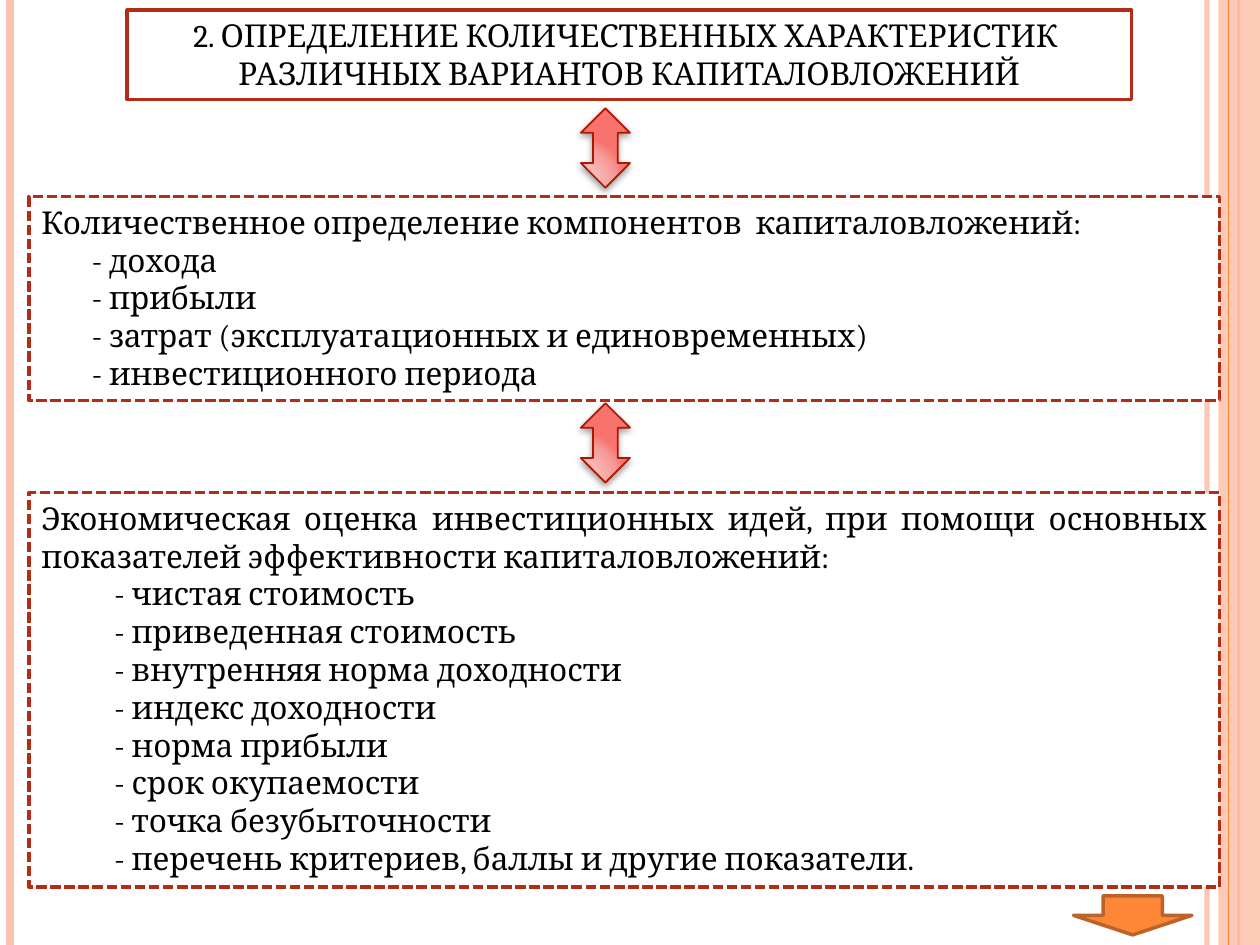
from dataclasses import dataclass

from lxml.etree import SubElement
from pptx import Presentation
from pptx.dml.color import RGBColor
from pptx.enum.dml import MSO_LINE
from pptx.enum.shapes import MSO_CONNECTOR, MSO_SHAPE
from pptx.enum.text import MSO_ANCHOR, PP_ALIGN
from pptx.oxml import parse_xml
from pptx.oxml.ns import nsdecls, qn
from pptx.util import Inches, Pt


@dataclass(frozen=True)
class Theme:
    font: str = "Cambria"
    text_size: int = 18
    text: str = "000000"
    paper: str = "FFFFFF"
    frame: str = "B32C16"
    peach: str = "FEC3AE"
    orange: str = "FE8637"
    orange_edge: str = "BC6329"
    arrow_edge: str = "AC1800"
    arrow_stops: tuple = ((0, "F8C5C3"), (30, "F8BFBD"), (75, "F69B98"), (100, "F8736E"))


theme = Theme()
deck = Presentation()
deck.slide_width, deck.slide_height = Inches(10), Inches(7.5)
page = deck.slides.add_slide(deck.slide_layouts[6])


def set_alpha(fill_parent, percent):
    color = fill_parent.find(".//" + qn("a:srgbClr"))
    SubElement(color, qn("a:alpha")).set("val", str(percent * 1000))


def add_shape(kind, left, top, width, height, fill=None, edge=None, weight=2):
    shape = page.shapes.add_shape(
        kind, Inches(left), Inches(top), Inches(width), Inches(height))
    shape.shadow.inherit = False
    if fill:
        shape.fill.solid()
        shape.fill.fore_color.rgb = RGBColor.from_string(fill)
    else:
        shape.fill.background()
    if edge:
        shape.line.color.rgb = RGBColor.from_string(edge)
        shape.line.width = Pt(weight)
    else:
        shape.line.fill.background()
    return shape


# Vertical stripes at the page edges, with the band between them
for x, color, weight, alpha in (
    (9.58, theme.peach, 3, 93),
    (0.08, theme.peach, 4.5, 100),
    (9.83, theme.orange, 1.5, 100),
    (9.75, theme.orange, 0.75, 100),
):
    if x == 9.83:
        stripe_first = False
    stripe = page.shapes.add_connector(
        MSO_CONNECTOR.STRAIGHT, Inches(x), 0, Inches(x), deck.slide_height)
    stripe.line.color.rgb = RGBColor.from_string(color)
    stripe.line.width = Pt(weight)
    properties = stripe.element.spPr
    SubElement(properties, qn("a:effectLst"))
    if alpha < 100:
        set_alpha(properties, alpha)
    if x == 9.83:
        band = add_shape(MSO_SHAPE.RECTANGLE, 9.67, 0, 0.33, 7.5, theme.peach)
        set_alpha(band.element.spPr, 87)

# Text boxes: position, dashed edge, lead lines, alignment, list indents, list
boxes = (
    ((1.01, 0.08, 7.97, 0.71), False,
     ("2. ОПРЕДЕЛЕНИЕ КОЛИЧЕСТВЕННЫХ ХАРАКТЕРИСТИК ",
      "РАЗЛИЧНЫХ ВАРИАНТОВ КАПИТАЛОВЛОЖЕНИЙ"),
     PP_ALIGN.CENTER, (0, 0), ()),
    ((0.23, 1.56, 9.45, 1.62), True,
     ("Количественное определение компонентов  капиталовложений:",),
     PP_ALIGN.LEFT, (0.4, 0),
     ("дохода", "прибыли", "затрат (эксплуатационных и единовременных)",
      "инвестиционного периода")),
    ((0.23, 3.91, 9.45, 3.13), True,
     ("Экономическая оценка инвестиционных идей, при помощи основных "
      "показателей эффективности капиталовложений:",),
     PP_ALIGN.JUSTIFY, (0, 0.58),
     ("чистая стоимость", "приведенная стоимость", "внутренняя норма доходности",
      "индекс доходности", "норма прибыли", "срок окупаемости",
      "точка безубыточности", "перечень критериев, баллы и другие показатели.")),
)
for place, dashed, leads, lead_align, (margin, indent), items in boxes:
    box = add_shape(MSO_SHAPE.RECTANGLE, *place, theme.paper, theme.frame)
    if dashed:
        box.line.dash_style = MSO_LINE.SQUARE_DOT
    frame = box.text_frame
    frame.word_wrap = dashed
    frame.vertical_anchor = MSO_ANCHOR.TOP
    lines = [(lead, lead_align, 0, 0) for lead in leads]
    lines += [("- " + item, PP_ALIGN.LEFT, margin, indent) for item in items]
    for number, (text, align, line_margin, line_indent) in enumerate(lines):
        para = frame.add_paragraph() if number else frame.paragraphs[0]
        para.alignment = align
        settings = para._p.get_or_add_pPr()
        settings.set("marL", str(Inches(line_margin)))
        settings.set("indent", str(Inches(line_indent)))
        span = para.add_run()
        span.text = text
        span.font.name = theme.font
        span.font.size = Pt(theme.text_size)
        span.font.color.rgb = RGBColor.from_string(theme.text)

# Double arrows between the boxes, with a radial gradient and a soft shadow
stops = "".join(
    f'<a:gs pos="{position * 1000}"><a:srgbClr val="{color}"/></a:gs>'
    for position, color in theme.arrow_stops)
for top in (0.86, 3.2):
    arrow = add_shape(MSO_SHAPE.UP_DOWN_ARROW, 4.61, top, 0.39, 0.63,
                      edge=theme.arrow_edge, weight=1)
    properties = arrow.element.spPr
    properties.replace(properties.find(qn("a:noFill")), parse_xml(
        f'<a:gradFill {nsdecls("a")} rotWithShape="1"><a:gsLst>{stops}</a:gsLst>'
        '<a:path path="circle"><a:fillToRect l="5000" t="100000" r="120000" '
        'b="10000"/></a:path></a:gradFill>'))
    properties.replace(properties.find(qn("a:effectLst")), parse_xml(
        f'<a:effectLst {nsdecls("a")}><a:outerShdw blurRad="{Pt(4)}" '
        f'dist="{Pt(2)}" dir="5400000" rotWithShape="0"><a:srgbClr '
        f'val="{theme.text}"><a:alpha val="40000"/></a:srgbClr>'
        '</a:outerShdw></a:effectLst>'))

# Arrow to the next page
add_shape(MSO_SHAPE.DOWN_ARROW, 8.52, 7.11, 0.94, 0.31,
          theme.orange, theme.orange_edge)

deck.save("out.pptx")
